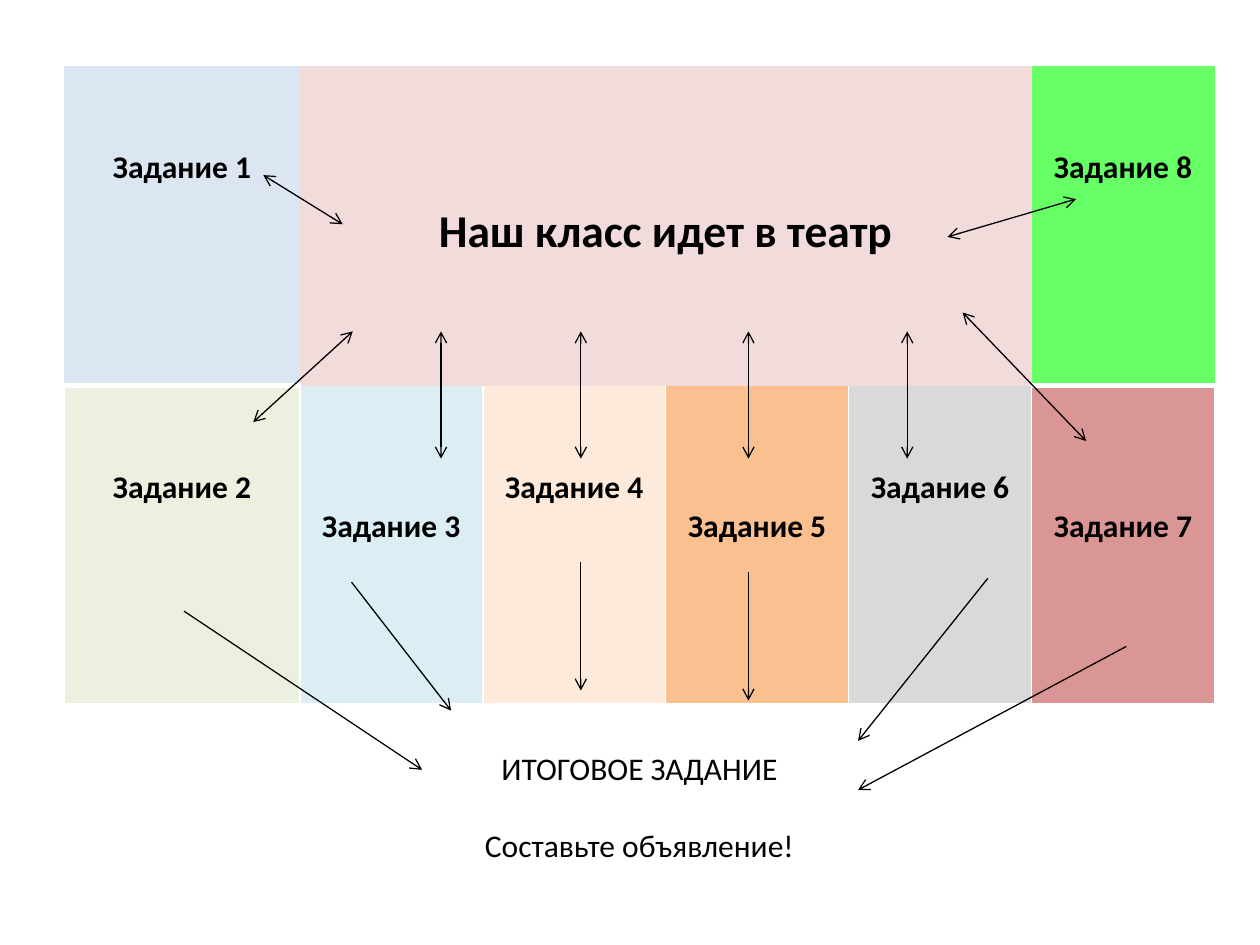
from lxml import etree
from pptx import Presentation
from pptx.dml.color import RGBColor
from pptx.enum.shapes import MSO_CONNECTOR
from pptx.enum.text import PP_ALIGN
from pptx.oxml.ns import qn
from pptx.util import Inches, Pt

CENTER = PP_ALIGN.CENTER
STRAIGHT = MSO_CONNECTOR.STRAIGHT
FONT = "Calibri"
NO_GRID_STYLE = "{2D5ABB26-0587-4C30-8999-92F81FD0307C}"

BOARD = (0.51, 0.52, 9.13, 6.6)
FIRST_COLUMN = 1.87
TASK_ROW = 2.54
HIGH, LOW = 0.66, 0.97

LOWER_TASKS = [
    ("Задание 2", "EBF1DE", HIGH),
    ("Задание 3", "DBEEF4", LOW),
    ("Задание 4", "FDEADA", HIGH),
    ("Задание 5", "FAC090", LOW),
    ("Задание 6", "D9D9D9", HIGH),
    ("Задание 7", "D99694", LOW),
]

TOPIC_ARROWS = [
    (1.58, 0.87, 2.21, 1.26),
    (7.01, 1.36, 8.03, 1.06),
    (1.5, 2.83, 2.29, 2.11),
    *[(x, 3.12, x, 2.11) for x in (2.99, 4.1, 5.43, 6.69)],
    (8.11, 2.98, 7.13, 1.96),
]
FINAL_ARROWS = [
    (0.95, 4.33, 2.84, 5.59),
    (2.28, 4.1, 3.07, 5.12),
    (4.1, 3.94, 4.1, 4.96),
    (5.43, 4.02, 5.43, 5.04),
    (7.33, 4.07, 6.3, 5.36),
    (8.43, 4.61, 6.3, 5.75),
]


def color(hex_value):
    return RGBColor.from_string(hex_value)


def add_border(cell, side, width):
    properties = cell._tc.get_or_add_tcPr()
    border = etree.SubElement(properties, qn(f"a:ln{side}"), w=str(Pt(width)))
    fill = etree.SubElement(border, qn("a:solidFill"))
    etree.SubElement(fill, qn("a:srgbClr"), val="FFFFFF")


def fill_cell(cell, lines, fill, margin_top, size=18, bold=True, borders=()):
    for side, width in borders:
        add_border(cell, side, width)
    if fill:
        cell.fill.solid()
        cell.fill.fore_color.rgb = color(fill)
    cell.margin_top = Inches(margin_top)
    cell.text = "\n".join(lines)
    for index, paragraph in enumerate(cell.text_frame.paragraphs):
        paragraph.alignment = CENTER
        paragraph.space_before = Pt(22 if index else 0)
        paragraph.font.name = FONT
        paragraph.font.size = Pt(size)
        paragraph.font.bold = bold
        paragraph.font.color.rgb = color("000000")


def add_task_board(slide, left, top, width, height):
    columns = len(LOWER_TASKS)
    frame = slide.shapes.add_table(
        3, columns, Inches(left), Inches(top), Inches(width), Inches(height))
    board = frame.table
    board.first_row = board.horz_banding = False
    board._tbl.tblPr.find(qn("a:tableStyleId")).text = NO_GRID_STYLE

    other_column = (width - FIRST_COLUMN) / (columns - 1)
    for index, column in enumerate(board.columns):
        column.width = Inches(other_column if index else FIRST_COLUMN)
    row_heights = (TASK_ROW, TASK_ROW, height - 2 * TASK_ROW)
    for row, row_height in zip(board.rows, row_heights):
        row.height = Inches(row_height)

    last = columns - 1
    topic, final = board.cell(0, 1), board.cell(2, 0)
    topic.merge(board.cell(0, last - 1))
    final.merge(board.cell(2, last))

    divider = [("B", 3)]
    fill_cell(board.cell(0, 0), ["Задание 1"], "DCE6F2", HIGH, borders=divider)
    fill_cell(topic, ["Наш класс идет в театр"], "F2DCDB", 1.1, size=26)
    fill_cell(board.cell(0, last), ["Задание 8"], "66FF66", HIGH, borders=divider)
    for index, (task, fill, margin_top) in enumerate(LOWER_TASKS):
        borders = [("L", 1), ("R", 1)]
        if index in (0, last):
            borders.append(("T", 3))
        fill_cell(board.cell(1, index), [task], fill, margin_top, borders=borders)
    fill_cell(final, ["ИТОГОВОЕ ЗАДАНИЕ", "Составьте объявление!"], None, 0.36,
              bold=False)


def add_arrows(slide, left, top, arrows, ends):
    for x1, y1, x2, y2 in arrows:
        arrow = slide.shapes.add_connector(
            STRAIGHT, Inches(left + x1), Inches(top + y1),
            Inches(left + x2), Inches(top + y2))
        arrow.line.color.rgb = color("000000")
        arrow.line.width = Pt(0.75)
        line = arrow.line._get_or_add_ln()
        for end in ends:
            etree.SubElement(line, qn(f"a:{end}"), type="arrow")
        etree.SubElement(arrow._element.spPr, qn("a:effectLst"))


def main():
    presentation = Presentation()
    presentation.slide_width = Inches(10)
    presentation.slide_height = Inches(7.5)
    slide = presentation.slides.add_slide(presentation.slide_layouts[6])
    left, top, width, height = BOARD
    add_task_board(slide, left, top, width, height)
    add_arrows(slide, left, top, TOPIC_ARROWS, ("headEnd", "tailEnd"))
    add_arrows(slide, left, top, FINAL_ARROWS, ("tailEnd",))
    presentation.save("out.pptx")


if __name__ == "__main__":
    main()
